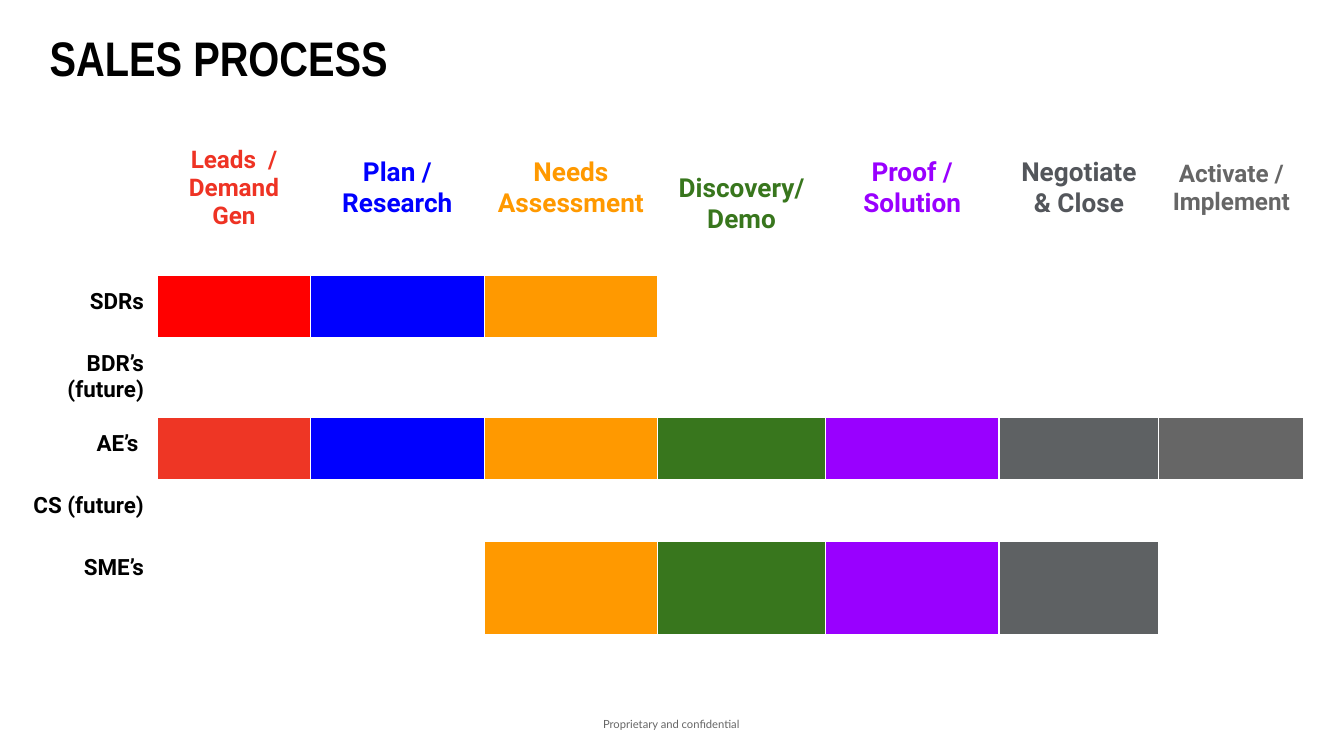
from dataclasses import dataclass
from lxml import etree
from pptx import Presentation
from pptx.dml.color import RGBColor
from pptx.enum.text import MSO_ANCHOR, PP_ALIGN
from pptx.oxml.ns import qn
from pptx.util import Cm, Pt

LEFT, MID, RIGHT = PP_ALIGN.LEFT, PP_ALIGN.CENTER, PP_ALIGN.RIGHT
TOP, CENTER = MSO_ANCHOR.TOP, MSO_ANCHOR.MIDDLE


@dataclass(frozen=True)
class Theme:
    black: str = "000000"
    white: str = "FFFFFF"
    red: str = "FF0000"
    coral: str = "EE3625"
    blue: str = "0000FF"
    orange: str = "FF9900"
    green: str = "38761D"
    purple: str = "9900FF"
    slate: str = "5E6163"
    grey: str = "666666"
    head: str = "Arial Narrow"
    body: str = "Roboto"
    foot: str = "Lato"
    title: int = 26
    stage: int = 14
    small: int = 13
    role: int = 12
    note: int = 6


T = Theme()

# Stage name, text colour, size and column width in cm
STAGES = [
    ("Leads  / Demand Gen", "EE3324", T.small, 2.9),
    ("Plan / Research", T.blue, T.stage, 3.28),
    ("Needs Assessment", T.orange, T.stage, 3.28),
    (" Discovery/Demo", T.green, T.stage, 3.17),
    ("Proof / Solution", T.purple, T.stage, 3.28),
    ("Negotiate & Close", "53565B", T.stage, 3.02),
    ("Activate / Implement", T.grey, T.small, 2.74),
]

# Role, row height in cm, first active stage and bar colours
ROLES = [
    ("SDRs", 1.17, 0, [T.red, T.blue, T.orange]),
    ("BDR’s (future)", 1.27, 0, []),
    ("AE’s ", 1.17, 0, [T.coral, T.blue, T.orange, T.green, T.purple,
                        T.slate, T.grey]),
    ("CS (future)", 1.17, 0, []),
    ("SME’s", 1.75, 2, [T.orange, T.green, T.purple, T.slate]),
]


def write(frame, text, *, size, color=T.black, font=T.body, bold=True,
          align=LEFT, space=1.0):
    para = frame.paragraphs[0]
    para.alignment = align
    para.line_spacing = space
    run = para.add_run()
    run.text = text
    run.font.size = Pt(size)
    run.font.name = font
    run.font.bold = bold
    run.font.color.rgb = RGBColor.from_string(color)


def add_box(slide, left, top, width, height, text, anchor=TOP, **style):
    box = slide.shapes.add_textbox(Cm(left), Cm(top), Cm(width), Cm(height))
    frame = box.text_frame
    frame.word_wrap = True
    frame.vertical_anchor = anchor
    write(frame, text, **style)
    frame.margin_left = frame.margin_right = Cm(0.25)


def add_rules(cell):
    props = cell._tc.get_or_add_tcPr()
    for spot, side in enumerate(("lnL", "lnR", "lnT", "lnB")):
        line = etree.Element(qn(f"a:{side}"), w=str(Pt(0.75)))
        fill = etree.SubElement(line, qn("a:solidFill"))
        etree.SubElement(fill, qn("a:srgbClr"), val=T.white)
        props.insert(spot, line)


def paint(cell, color):
    cell.fill.solid()
    cell.fill.fore_color.rgb = RGBColor.from_string(color)
    add_rules(cell)


def label(cell, text, anchor, **style):
    cell.margin_left = cell.margin_right = Cm(0.25)
    cell.margin_top = cell.margin_bottom = Cm(0.25)
    cell.vertical_anchor = anchor
    write(cell.text_frame, text, **style)


def add_grid(slide):
    widths = [2.72] + [stage[3] for stage in STAGES]
    heights = [3.3] + [role[1] for role in ROLES]
    grid = slide.shapes.add_table(
        len(heights), len(widths), Cm(0.25), Cm(1.91),
        Cm(sum(widths)), Cm(sum(heights))).table
    grid.first_row = grid.horz_banding = False
    for col, width in zip(grid.columns, widths):
        col.width = Cm(width)
    for row, height in zip(grid.rows, heights):
        row.height = Cm(height)

    # Stage heads
    paint(grid.cell(0, 0), T.white)
    for col, (name, color, size, _) in enumerate(STAGES, 1):
        cell = grid.cell(0, col)
        paint(cell, T.white)
        label(cell, name, CENTER, size=size, color=color, align=MID)

    # Role names and bars
    for row, (name, _, first, bars) in enumerate(ROLES, 1):
        head = grid.cell(row, 0)
        paint(head, T.white)
        label(head, name, TOP, size=T.role, align=RIGHT)
        for col in range(len(STAGES)):
            step = col - first
            live = 0 <= step < len(bars)
            paint(grid.cell(row, col + 1), bars[step] if live else T.white)


def main():
    deck = Presentation()
    deck.slide_width, deck.slide_height = Cm(25.4), Cm(14.29)
    slide = deck.slides.add_slide(deck.slide_layouts[6])

    # Footer
    add_box(slide, 9.27, 13.08, 6.83, 1.19, "Proprietary and confidential",
            CENTER, size=T.note, color=T.grey, font=T.foot, bold=False,
            align=MID, space=1.15)
    # Stage by role table
    add_grid(slide)
    # Title
    add_box(slide, 0.69, 0.41, 11.63, 1.5, "SALES PROCESS",
            size=T.title, font=T.head)
    deck.save("out.pptx")


if __name__ == "__main__":
    main()
